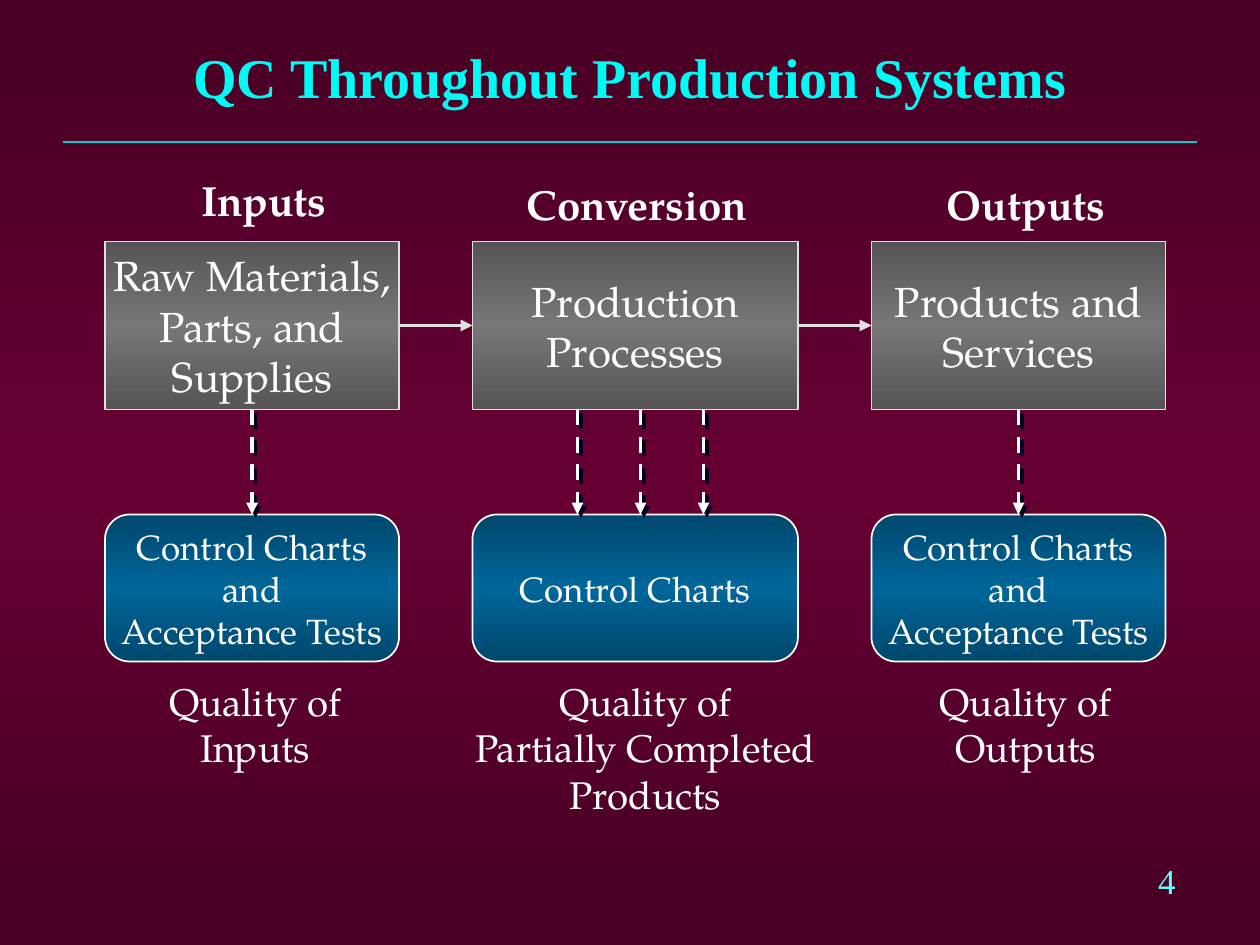
"""Build the slide on quality control throughout production systems."""
from dataclasses import dataclass
from typing import Optional

from lxml.etree import SubElement
from pptx import Presentation
from pptx.dml.color import RGBColor as RGB
from pptx.dml.fill import FillFormat
from pptx.enum.dml import MSO_LINE as Dash
from pptx.enum.shapes import MSO_CONNECTOR as Conn, MSO_SHAPE as Shape
from pptx.enum.text import MSO_ANCHOR as Anchor, PP_ALIGN as Align
from pptx.oxml import parse_xml
from pptx.oxml.ns import nsdecls, qn
from pptx.util import Pt

PX = 9525
SERIF, BODY = "Times New Roman", "TeX Gyre Pagella"
COLORS = {
    "background": "660033", "band": "4C0026", "rule": "00CECE", "title": "00FAF4",
    "number": "66FFFF", "stage": "777777", "edge": "E0E0E0", "check": "006699",
    "text": "FFFFFF", "shadow": "000020",
}
STAGE_Y, STAGE_H = 184, 128
CHECK_Y, CHECK_H = 392, 112
CAPTION_Y = 512


@dataclass
class Label:
    text: str
    x: int
    y: int
    w: int
    h: int


@dataclass
class Column:
    x: int
    w: int
    heading: Label
    stage: str
    check: str
    caption: Label
    drops: tuple[int, ...] = ()


COLUMNS = [
    Column(80, 224, Label("Inputs", 144, 128, 115, 48),
           "Raw Materials,\nParts, and\nSupplies", "Control Charts\nand\nAcceptance Tests",
           Label("Quality of\nInputs", 119, CAPTION_Y, 151, 80)),
    Column(360, 248, Label("Conversion", 392, 131, 188, 48),
           "Production\nProcesses", "Control Charts",
           Label("Quality of\nPartially Completed\nProducts", 351, CAPTION_Y, 281, 115),
           (440, 488, 536)),
    Column(664, 224, Label("Outputs", 712, 131, 140, 48),
           "Products and\nServices", "Control Charts\nand\nAcceptance Tests",
           Label("Quality of\nOutputs", 706, CAPTION_Y, 151, 80)),
]


def rgb(name: str) -> RGB:
    return RGB.from_string(COLORS[name])


def shade_gradient(fill: FillFormat, name: str) -> None:
    fill.gradient()
    dark = f'<a:srgbClr val="{COLORS[name]}"><a:shade val="46275"/></a:srgbClr>'
    old = fill._xPr.find(qn("a:gradFill"))
    old.getparent().replace(old, parse_xml(
        f'<a:gradFill {nsdecls("a")} rotWithShape="1"><a:gsLst><a:gs pos="0">{dark}</a:gs>'
        f'<a:gs pos="50000"><a:srgbClr val="{COLORS[name]}"/></a:gs>'
        f'<a:gs pos="100000">{dark}</a:gs></a:gsLst><a:lin ang="5400000" scaled="1"/></a:gradFill>'))


def drop_shadow():
    return parse_xml(
        f'<a:effectLst {nsdecls("a")}><a:outerShdw dist="35921" dir="2700000" algn="ctr" '
        f'rotWithShape="0"><a:srgbClr val="{COLORS["shadow"]}"/></a:outerShdw></a:effectLst>')


def write(tf, text: str, size: int, color: str = "text", font: str = BODY,
          bold: bool = False, align: Align = Align.CENTER) -> None:
    for i, line in enumerate(text.split("\n")):
        p = tf.add_paragraph() if i else tf.paragraphs[0]
        p.add_run().text = line
        p.alignment = align
        p.font.size, p.font.name, p.font.bold = Pt(size), font, bold
        p.font.color.rgb = rgb(color)


def add_label(s, label: Label, size: int, **style) -> None:
    tb = s.shapes.add_textbox(label.x * PX, label.y * PX, label.w * PX, label.h * PX)
    tb.text_frame.word_wrap = False
    write(tb.text_frame, label.text, size, **style)


def add_box(s, kind: Shape, x: int, y: int, w: int, h: int, fill: str, line: str,
            text: str, size: int):
    sp = s.shapes.add_shape(kind, x * PX, y * PX, w * PX, h * PX)
    sp.shadow.inherit = False
    shade_gradient(sp.fill, fill)
    sp.line.color.rgb, sp.line.width = rgb(line), Pt(1)
    tf = sp.text_frame
    tf.word_wrap, tf.vertical_anchor = False, Anchor.MIDDLE
    write(tf, text, size)
    return sp


def add_line(s, x1: int, y1: int, x2: int, y2: int, color: str, width: float,
             arrow: bool = False, dashed: bool = False,
             begin: Optional[tuple] = None, end: Optional[tuple] = None) -> None:
    c = s.shapes.add_connector(Conn.STRAIGHT, x1 * PX, y1 * PX, x2 * PX, y2 * PX)
    c.line.color.rgb, c.line.width = rgb(color), Pt(width)
    if dashed:
        c.line.dash_style = Dash.DASH
    if arrow:
        SubElement(c.line._get_or_add_ln(), qn("a:tailEnd"), type="triangle")
    sp_pr = c._element.spPr
    if dashed:
        sp_pr.append(drop_shadow())
    else:
        SubElement(sp_pr, qn("a:effectLst"))
    if begin:
        c.begin_connect(*begin)
    if end:
        c.end_connect(*end)


def add_frame(s) -> None:
    shade_gradient(s.background.fill, "background")
    band = s.shapes.add_shape(Shape.RECTANGLE, 22 * PX, 106 * PX, 913 * PX, 5 * PX)
    band.shadow.inherit = False
    band.fill.solid()
    band.fill.fore_color.rgb = rgb("band")
    band.line.fill.background()
    add_line(s, 48, 108, 912, 108, "rule", 1)
    add_label(s, Label("4", 873, 650, 50, 41), 20, color="number", font=SERIF, align=Align.LEFT)


def add_title(s, text: str) -> None:
    title = s.shapes.title
    title.left, title.top, title.width, title.height = 32 * PX, 8 * PX, 896 * PX, 100 * PX
    tf = title.text_frame
    tf.vertical_anchor = Anchor.MIDDLE
    write(tf, text, 32, color="title", font=SERIF, bold=True)
    tf.paragraphs[0].runs[0].font._element.append(drop_shadow())


def add_columns(s) -> None:
    stages, checks = [], []
    for col in COLUMNS:
        stages.append(add_box(s, Shape.RECTANGLE, col.x, STAGE_Y, col.w, STAGE_H,
                              "stage", "edge", col.stage, 24))
        checks.append(add_box(s, Shape.ROUNDED_RECTANGLE, col.x, CHECK_Y, col.w, CHECK_H,
                              "check", "text", col.check, 20))
        add_label(s, col.heading, 24, bold=True, align=Align.LEFT)
        add_label(s, col.caption, 22)
    mid = STAGE_Y + STAGE_H // 2
    for i, (a, b) in enumerate(zip(COLUMNS, COLUMNS[1:])):
        add_line(s, a.x + a.w, mid, b.x, mid, "edge", 2.25, arrow=True,
                 begin=(stages[i], 3), end=(stages[i + 1], 1))
    for col, stage, check in zip(COLUMNS, stages, checks):
        joined = not col.drops
        for x in col.drops or (col.x + col.w // 2,):
            add_line(s, x, STAGE_Y + STAGE_H, x, CHECK_Y, "text", 2.25, arrow=True, dashed=True,
                     begin=(stage, 2) if joined else None, end=(check, 0) if joined else None)


def main() -> None:
    prs = Presentation()
    prs.slide_width, prs.slide_height = 960 * PX, 720 * PX
    s = prs.slides.add_slide(prs.slide_layouts[5])
    add_frame(s)
    add_title(s, "QC Throughout Production Systems")
    add_columns(s)
    prs.save("out.pptx")


if __name__ == "__main__":
    main()
